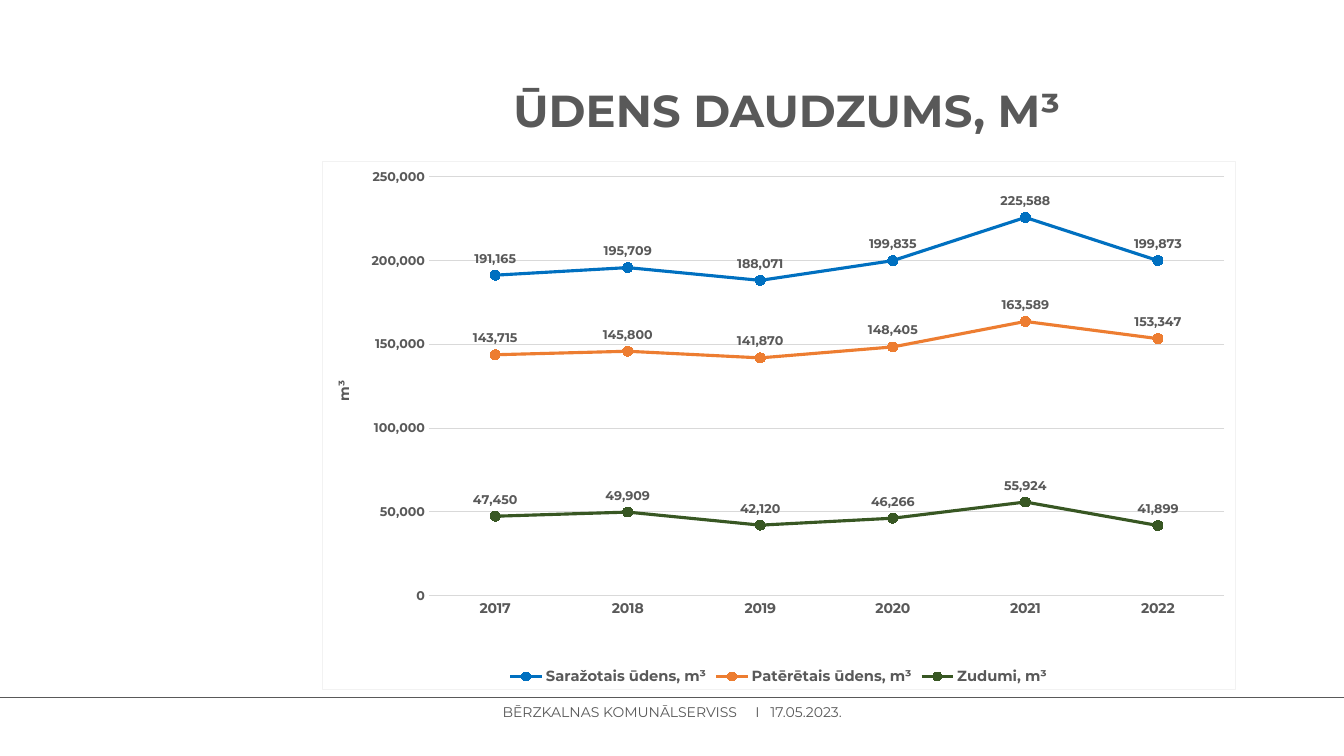
"""Build a slide with a line chart of water volumes by year."""
from dataclasses import dataclass

from lxml.etree import SubElement
from pptx import Presentation
from pptx.chart.chart import Chart
from pptx.chart.data import CategoryChartData
from pptx.dml.color import RGBColor
from pptx.enum.chart import (XL_CHART_TYPE, XL_LABEL_POSITION, XL_LEGEND_POSITION,
                             XL_MARKER_STYLE, XL_TICK_MARK)
from pptx.enum.shapes import MSO_CONNECTOR
from pptx.enum.text import MSO_ANCHOR, MSO_AUTO_SIZE, PP_ALIGN
from pptx.oxml import parse_xml
from pptx.oxml.ns import nsdecls, qn
from pptx.slide import Slide
from pptx.util import Pt


@dataclass(frozen=True)
class Theme:
    font: str = "Montserrat"
    text: str = "595959"
    grid: str = "D9D9D9"
    border: str = "F2F2F2"
    title_size: float = 32
    footer_size: float = 10
    legend_size: float = 10.5
    axis_size: float = 10
    value_size: float = 9
    hairline: float = 0.75
    series_line: float = 2.25
    marker: int = 7


@dataclass(frozen=True)
class WaterSeries:
    name: str
    color: str
    values: tuple[int, ...]


@dataclass(frozen=True)
class FooterPart:
    text: str
    spacing: float = 0


THEME = Theme()
YEARS = ("2017", "2018", "2019", "2020", "2021", "2022")
SERIES = (
    WaterSeries("Saražotais ūdens, m³", "0070C0",
                (191165, 195709, 188071, 199835, 225588, 199873)),
    WaterSeries("Patērētais ūdens, m³", "ED7D31",
                (143715, 145800, 141870, 148405, 163589, 153347)),
    WaterSeries("Zudumi, m³", "385723",
                (47450, 49909, 42120, 46266, 55924, 41899)),
)
FOOTER = (
    FooterPart("BĒRZKALNAS KOMUNĀLSERVISS"),
    FooterPart(" ", 10.5),
    FooterPart("I"),
    FooterPart(" ", 5.2),
    FooterPart("17.05.2023."),
)


def rgb(color: str) -> RGBColor:
    return RGBColor.from_string(color)


def style_font(font, size: float, bold: bool = True) -> None:
    font.name = THEME.font
    font.size = Pt(size)
    font.bold = bold
    font.color.rgb = rgb(THEME.text)


def style_line(line, color: str, width: float) -> None:
    line.color.rgb = rgb(color)
    line.width = Pt(width)


def manual_layout(**values: float | str):
    layout = parse_xml(f"<c:layout {nsdecls('c')}><c:manualLayout/></c:layout>")
    for name, value in values.items():
        SubElement(layout[0], qn(f"c:{name}")).set("val", str(value))
    return layout


def remove_layout(parent) -> None:
    for old in parent.findall(qn("c:layout")):
        parent.remove(old)


def add_title(s: Slide) -> None:
    sp = s.shapes.title
    sp.left, sp.top, sp.width, sp.height = Pt(229.7), Pt(28.8), Pt(664.6), Pt(104.4)
    tf = sp.text_frame
    tf.auto_size = MSO_AUTO_SIZE.NONE
    tf.vertical_anchor = MSO_ANCHOR.MIDDLE
    p = tf.paragraphs[0]
    p.alignment = PP_ALIGN.CENTER
    p.line_spacing = 0.9
    r = p.add_run()
    r.text = "ŪDENS DAUDZUMS, M³"
    style_font(r.font, THEME.title_size)


def add_footer(s: Slide) -> None:
    rule = s.shapes.add_connector(MSO_CONNECTOR.STRAIGHT, 0, Pt(498.2), Pt(960), Pt(498.2))
    style_line(rule.line, THEME.text, THEME.hairline)
    SubElement(rule._element.spPr, qn("a:effectLst"))

    tf = s.shapes.add_textbox(Pt(5), Pt(502.6), Pt(950.4), Pt(12.2)).text_frame
    tf.word_wrap = True
    tf.auto_size = MSO_AUTO_SIZE.SHAPE_TO_FIT_TEXT
    tf.margin_left = tf.margin_top = tf.margin_right = tf.margin_bottom = 0
    p = tf.paragraphs[0]
    p.alignment = PP_ALIGN.CENTER
    p.line_spacing = Pt(12)
    for part in FOOTER:
        r = p.add_run()
        r.text = part.text
        style_font(r.font, THEME.footer_size, bold=False)
        if part.spacing:
            r._r.get_or_add_rPr().set("spc", str(round(part.spacing * 100)))


def style_axes(chart: Chart) -> None:
    years, volume = chart.category_axis, chart.value_axis
    for axis, size in ((years, THEME.axis_size), (volume, THEME.value_size)):
        axis.major_tick_mark = axis.minor_tick_mark = XL_TICK_MARK.NONE
        style_font(axis.tick_labels.font, size)
    style_line(years.format.line, THEME.grid, THEME.hairline)

    volume.minimum_scale, volume.maximum_scale, volume.major_unit = 0, 250000, 50000
    volume.tick_labels.number_format = "#,##0"
    volume.tick_labels.number_format_is_linked = False
    volume.format.line.fill.background()
    style_line(volume.major_gridlines.format.line, THEME.grid, THEME.hairline)

    tf = volume.axis_title.text_frame
    r = tf.paragraphs[0].add_run()
    r.text = "m³"
    style_font(r.font, THEME.axis_size)
    title = volume.axis_title._element
    body = title.find(".//" + qn("a:bodyPr"))
    body.set("rot", "-5400000")
    body.set("vert", "horz")
    remove_layout(title)
    title.find(qn("c:tx")).addnext(
        manual_layout(xMode="edge", yMode="edge", x=0.01, y=0.41))


def style_series(chart: Chart) -> None:
    for series, water in zip(chart.plots[0].series, SERIES):
        series.smooth = False
        style_line(series.format.line, water.color, THEME.series_line)
        marker = series.marker
        marker.style, marker.size = XL_MARKER_STYLE.CIRCLE, THEME.marker
        marker.format.fill.solid()
        marker.format.fill.fore_color.rgb = rgb(water.color)
        style_line(marker.format.line, water.color, THEME.hairline)
        labels = series.data_labels
        labels.show_value = True
        labels.position = XL_LABEL_POSITION.ABOVE
        style_font(labels.font, THEME.value_size)


def add_water_chart(s: Slide) -> None:
    data = CategoryChartData(number_format="#,##0")
    data.categories = YEARS
    for water in SERIES:
        data.add_series(water.name, water.values)
    chart = s.shapes.add_chart(XL_CHART_TYPE.LINE_MARKERS, Pt(229.7), Pt(115.2),
                               Pt(653), Pt(378), data).chart
    chart.has_title = False
    style_font(chart.font, THEME.axis_size)
    chart.plots[0].vary_by_categories = False
    style_axes(chart)
    style_series(chart)

    chart.has_legend = True
    chart.legend.position = XL_LEGEND_POSITION.BOTTOM
    chart.legend.include_in_layout = False
    style_font(chart.legend.font, THEME.legend_size)

    space = chart._chartSpace
    plot_area = space.chart.plotArea
    remove_layout(plot_area)
    plot_area.insert(0, manual_layout(layoutTarget="inner", xMode="edge", yMode="edge",
                                      x=0.117, y=0.028, w=0.871, h=0.794))
    space.chart.addnext(parse_xml(
        f"<c:spPr {nsdecls('c', 'a')}><a:noFill/><a:ln w=\"{Pt(THEME.hairline)}\"><a:solidFill>"
        f"<a:srgbClr val=\"{THEME.border}\"/></a:solidFill></a:ln></c:spPr>"))


def main() -> None:
    prs = Presentation()
    prs.slide_width, prs.slide_height = Pt(960), Pt(540)
    s = prs.slides.add_slide(prs.slide_layouts.get_by_name("Title Only"))
    add_footer(s)
    add_title(s)
    add_water_chart(s)
    prs.save("out.pptx")


if __name__ == "__main__":
    main()
